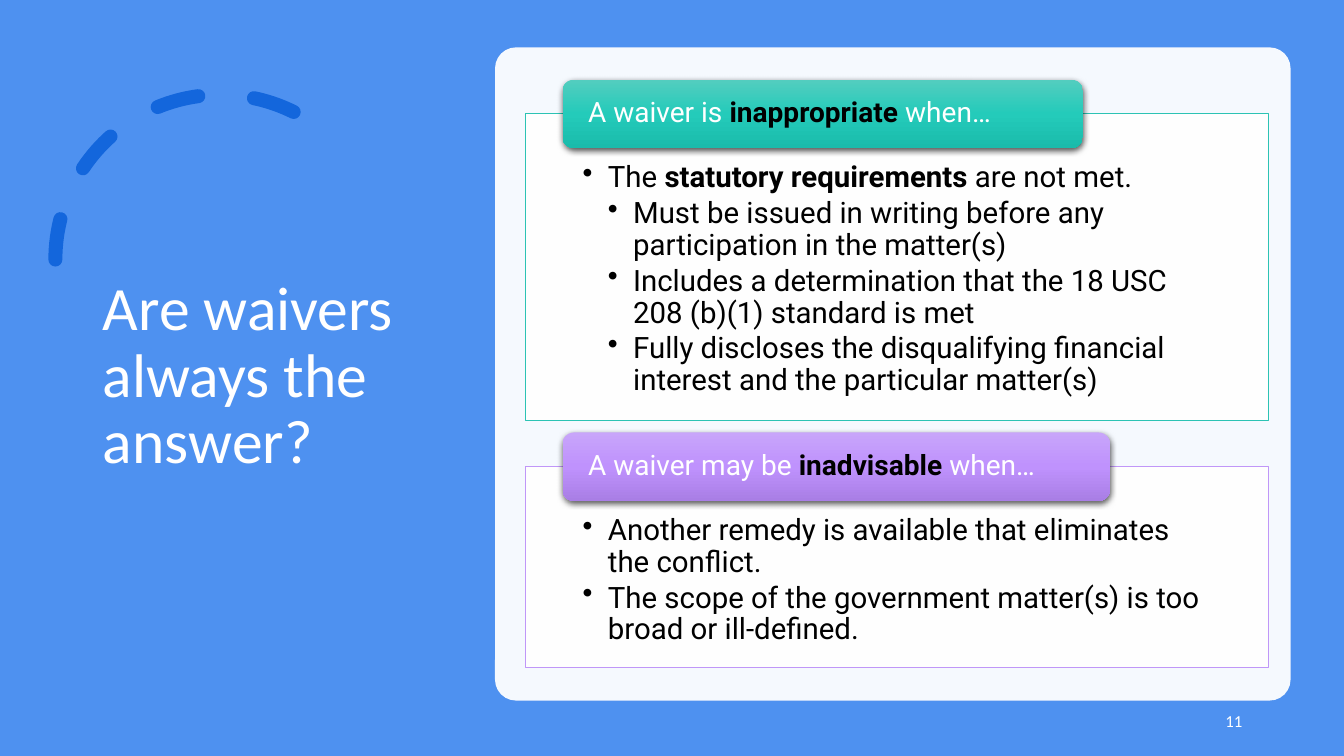
import copy

import pptx
import pptx.dml.color
import pptx.enum.dml
import pptx.enum.shapes
import pptx.enum.text
import pptx.oxml
import pptx.oxml.ns
import pptx.util

Inches = pptx.util.Inches
Pt = pptx.util.Pt
SHAPE = pptx.enum.shapes.MSO_SHAPE
ANCHOR = pptx.enum.text.MSO_ANCHOR
ALIGN = pptx.enum.text.PP_ALIGN

PANELS = [
    {
        "top": 1.13, "height": 3.04, "badge_width": 5.16, "line": "2CC3B4",
        "gradient": ["53CDBF", "24CBBA", "1ABBAB"],
        "heading": [("A waiver is ", False), ("inappropriate", True), (" when…", False)],
        "bullets": [
            (0, [("The", False), (" statutory requirements ", True), ("are not met.", False)]),
            (1, [("Must be issued in writing before any participation in the matter(s)", False)]),
            (1, [("Includes a determination that the 18 USC 208 (b)(1) standard is met", False)]),
            (1, [("Fully discloses the disqualifying financial interest and the particular matter(s)", False)]),
        ],
    },
    {
        "top": 4.63, "height": 1.99, "badge_width": 5.43, "line": "C097F8",
        "gradient": ["C8A5FA", "BF92FD", "A97EE5"],
        "heading": [("A waiver may be ", False), ("inadvisable ", True), ("when…", False)],
        "bullets": [
            (0, [("Another remedy is available that eliminates the conflict.", False)]),
            (0, [("The scope of the government matter(s) is too broad or ill-defined.", False)]),
        ],
    },
]


def color(value):
    return pptx.dml.color.RGBColor.from_string(value)


def add_element(parent, tag, **attributes):
    element = pptx.oxml.parse_xml(f"<a:{tag} {pptx.oxml.ns.nsdecls('a')}/>")
    for name, value in attributes.items():
        element.set(name, str(value))
    parent.append(element)
    return element


def add_plain_shape(slide, kind, left, top, width, height):
    shape = slide.shapes.add_shape(kind, Inches(left), Inches(top), Inches(width), Inches(height))
    shape.shadow.inherit = False
    shape.line.fill.background()
    return shape


def fill_translucent(shape, value, percent):
    shape.fill.solid()
    shape.fill.fore_color.rgb = color(value)
    fill_color = shape.fill._xPr.find(".//" + pptx.oxml.ns.qn("a:srgbClr"))
    add_element(fill_color, "alpha", val=percent * 1000)


def fill_gradient(shape, values):
    shape.fill.gradient()
    shape.fill.gradient_angle = 270
    stop_list = shape.fill._xPr.find(".//" + pptx.oxml.ns.qn("a:gsLst"))
    stop_list.append(copy.deepcopy(stop_list[-1]))
    for index, (stop, value) in enumerate(zip(shape.fill.gradient_stops, values)):
        stop.position = index / (len(values) - 1)
        stop.color.rgb = color(value)


def add_shadow(shape):
    effects = shape._element.spPr.find(pptx.oxml.ns.qn("a:effectLst"))
    shadow = add_element(effects, "outerShdw", blurRad=Pt(4.5), dist=Pt(1.5),
                         dir=5400000, algn="ctr", rotWithShape=0)
    shadow_color = add_element(shadow, "srgbClr", val="000000")
    add_element(shadow_color, "alpha", val=63000)


def set_margins(frame, left, top, right, bottom):
    frame.word_wrap = True
    frame.margin_left, frame.margin_top = Inches(left), Inches(top)
    frame.margin_right, frame.margin_bottom = Inches(right), Inches(bottom)


def format_paragraph(paragraph, name, size, value, alignment=ALIGN.LEFT):
    paragraph.alignment = alignment
    paragraph.font.name = name
    paragraph.font.size = Pt(size)
    paragraph.font.color.rgb = color(value)


def write_runs(paragraph, pieces):
    for text, bold in pieces:
        run = paragraph.add_run()
        run.text = text
        run.font.bold = bold
        run.font.color.rgb = color("000000") if bold else paragraph.font.color.rgb


def add_title(slide, left, top, width, height):
    title = slide.shapes.title
    title.left, title.top = Inches(left), Inches(top)
    title.width, title.height = Inches(width), Inches(height)
    frame = title.text_frame
    frame.text = "Are waivers always the answer?"
    frame.word_wrap = True
    frame.auto_size = pptx.enum.text.MSO_AUTO_SIZE.NONE
    frame.vertical_anchor = ANCHOR.MIDDLE
    frame.paragraphs[0].line_spacing = 0.9
    format_paragraph(frame.paragraphs[0], "Calibri", 44, "FFFFFF")


def add_dashed_arc(slide, left, top, size):
    arc = add_plain_shape(slide, SHAPE.ARC, left, top, size, size)
    arc.adjustments[0] = 146.13
    arc.adjustments[1] = 0
    arc._element.spPr.xfrm.set("flipH", "1")
    arc.fill.background()
    arc.line.color.rgb = color("1366DC")
    arc.line.width = Pt(10)
    arc.line.dash_style = pptx.enum.dml.MSO_LINE.DASH
    arc.line._get_or_add_ln().set("cap", "rnd")


def add_badge(slide, panel, left, top, width, height):
    badge = add_plain_shape(slide, SHAPE.ROUNDED_RECTANGLE, left, top, width, height)
    fill_gradient(badge, panel["gradient"])
    add_shadow(badge)
    set_margins(badge.text_frame, 0.22, 0, 0.22, 0)
    badge.text_frame.vertical_anchor = ANCHOR.MIDDLE
    paragraph = badge.text_frame.paragraphs[0]
    paragraph.line_spacing = 0.9
    format_paragraph(paragraph, "Roboto", 20, "FFFFFF")
    write_runs(paragraph, panel["heading"])


def add_panel(slide, panel, left, width):
    top, height = panel["top"], panel["height"]
    body = add_plain_shape(slide, SHAPE.RECTANGLE, left, top, width, height)
    fill_translucent(body, "FFFFFF", 90)
    body.line.color.rgb = color(panel["line"])
    body.line.width = Pt(0.5)
    frame = body.text_frame
    set_margins(frame, 0.57, 0.48, 0.57, 0.16)
    frame.vertical_anchor = ANCHOR.TOP
    for index, (level, pieces) in enumerate(panel["bullets"]):
        paragraph = frame.add_paragraph() if index else frame.paragraphs[0]
        paragraph.level = level
        paragraph.line_spacing = 0.9
        paragraph.space_after = Pt(3)
        format_paragraph(paragraph, "Roboto", 21, "000000")
        properties = paragraph._p.get_or_add_pPr()
        properties.set("marL", str(Inches(0.25 * (level + 1))))
        properties.set("indent", str(Inches(-0.25)))
        bullet = add_element(properties, "buChar", char="•")
        properties.find(pptx.oxml.ns.qn("a:defRPr")).addprevious(bullet)
        write_runs(paragraph, pieces)
    add_badge(slide, panel, left + 0.37, top - 0.34, panel["badge_width"], 0.68)


def add_card(slide, left, top, width, height):
    card = add_plain_shape(slide, SHAPE.ROUNDED_RECTANGLE, left, top, width, height)
    card.adjustments[0] = 0.032
    fill_translucent(card, "FFFFFF", 95)
    for panel in PANELS:
        add_panel(slide, panel, left + 0.3, width - 0.52)


def add_page_number(slide, left, top, width, height):
    box = slide.shapes.add_textbox(Inches(left), Inches(top), Inches(width), Inches(height))
    box.text_frame.word_wrap = True
    box.text_frame.vertical_anchor = ANCHOR.MIDDLE
    box.text_frame.text = "11"
    format_paragraph(box.text_frame.paragraphs[0], "Calibri", 12, "FFFFFF", ALIGN.RIGHT)


def main():
    presentation = pptx.Presentation()
    presentation.slide_width = Inches(13.33)
    presentation.slide_height = Inches(7.5)
    slide = presentation.slides.add_slide(presentation.slide_layouts[5])
    slide.background.fill.solid()
    slide.background.fill.fore_color.rgb = color("4E91F0")
    add_dashed_arc(slide, 0.55, 0.94, 3.27)
    add_title(slide, 0.92, 0.7, 3.23, 6.09)
    add_card(slide, 4.91, 0.47, 7.89, 6.48)
    add_page_number(slide, 9.42, 6.95, 3, 0.4)
    presentation.save("out.pptx")


if __name__ == "__main__":
    main()
